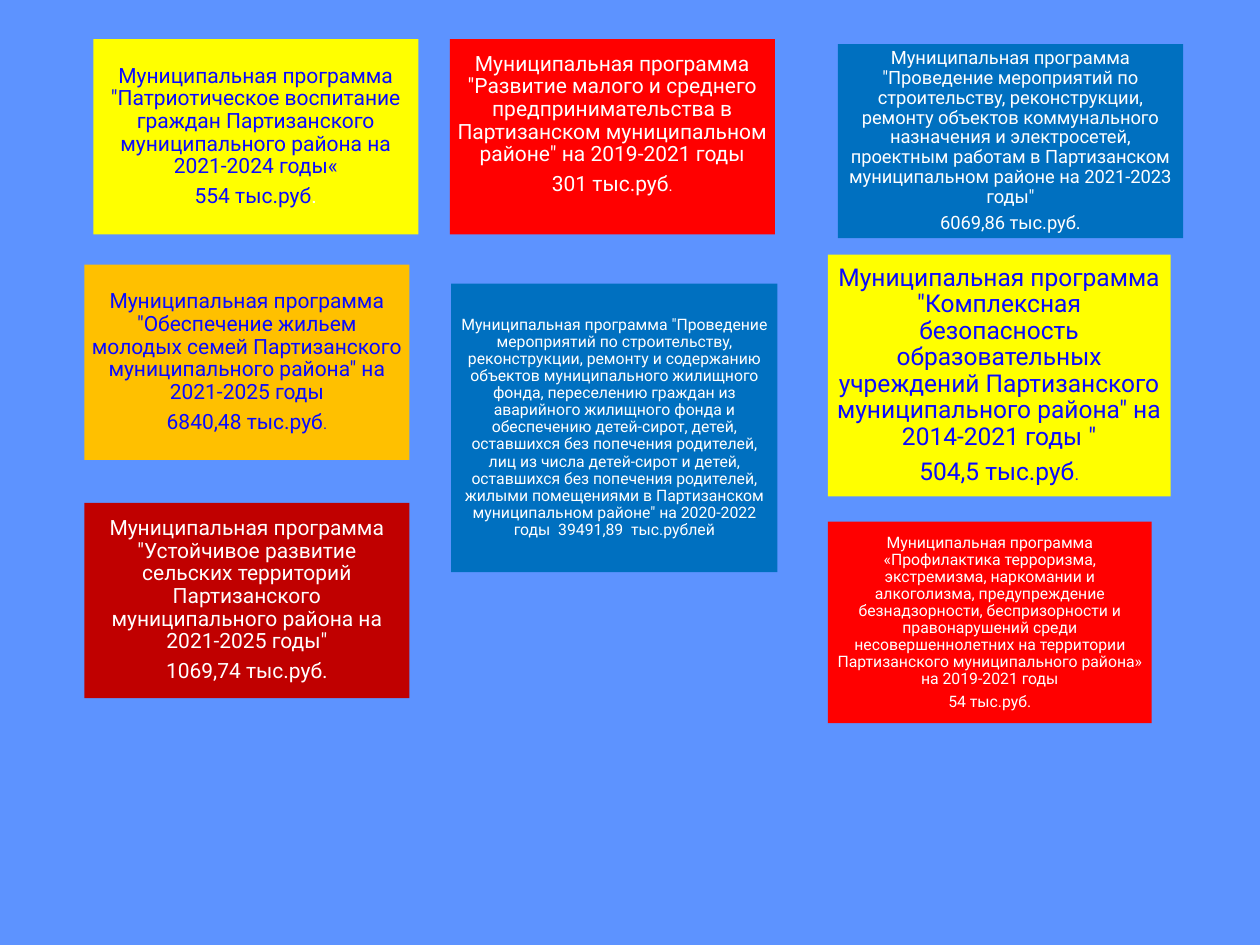
from pptx import Presentation
from pptx import util as u
from pptx.dml import color
from pptx.enum import shapes, text

INK = {
    "back": "5D93FF",
    "yellow": "FFFF00",
    "red": "FF0000",
    "blue": "0070C0",
    "amber": "FFC000",
    "wine": "C00000",
    "navy": "0A0AFF",
    "white": "FFFFFF",
}
FONT = "Roboto"
CARD = (2.58, 1.55)
LEAD = "Муниципальная программа "


def paint(fill, name):
    fill.solid()
    fill.fore_color.rgb = color.RGBColor.from_string(INK[name])


def style(run, size, ink):
    run.font.name = FONT
    run.font.size = u.Pt(size)
    run.font.color.rgb = color.RGBColor.from_string(INK[ink])


def space(para, size):
    para.alignment = text.PP_ALIGN.CENTER
    para.line_spacing = 0.9
    para.space_after = u.Pt(round(size * 0.35, 2))


def add_card(slide, spot, area, fill, ink, size, title, sum="", dot=None, pad=0.05, foot=None):
    box = slide.shapes.add_shape(
        shapes.MSO_SHAPE.RECTANGLE, *(u.Inches(v) for v in spot + area))
    box.shadow.inherit = False
    paint(box.fill, fill)
    box.line.fill.background()
    frame = box.text_frame
    frame.word_wrap = True
    frame.vertical_anchor = text.MSO_ANCHOR.MIDDLE
    frame.margin_left = frame.margin_right = frame.margin_top = u.Inches(pad)
    frame.margin_bottom = u.Inches(foot or pad)
    frame.text = "\n".join(filter(None, [LEAD + title, sum]))
    for para in frame.paragraphs:
        space(para, size)
        for run in para.runs:
            style(run, size, ink)
    if dot:
        run = frame.paragraphs[-1].add_run()
        run.text = "."
        style(run, *dot)


def main():
    deck = Presentation()
    deck.slide_width, deck.slide_height = u.Inches(10), u.Inches(7.5)
    slide = deck.slides.add_slide(deck.slide_layouts[6])
    paint(slide.background.fill, "back")

    add_card(slide, (0.74, 0.31), CARD, "yellow", "navy", 12,
             '"Патриотическое воспитание граждан Партизанского '
             'муниципального района на 2021-2024 годы«',
             "554 тыс.руб", (12, "white"))
    add_card(slide, (3.57, 0.31), CARD, "red", "white", 12,
             '"Развитие малого и среднего предпринимательства в '
             'Партизанском муниципальном районе" на 2019-2021 годы',
             "301 тыс.руб", (9, "white"), foot=0.24)
    add_card(slide, (6.65, 0.35), (2.74, 1.54), "blue", "white", 10.5,
             '"Проведение мероприятий по строительству, реконструкции, '
             'ремонту объектов коммунального назначения и электросетей, '
             'проектным работам в Партизанском муниципальном районе '
             'на 2021-2023 годы"',
             "6069,86 тыс.руб.")
    add_card(slide, (0.67, 2.1), CARD, "amber", "navy", 12,
             '"Обеспечение жильем молодых семей Партизанского '
             'муниципального района" на 2021-2025 годы',
             "6840,48 тыс.руб", (9, "navy"))
    add_card(slide, (0.67, 3.99), CARD, "wine", "white", 12,
             '"Устойчивое развитие сельских территорий Партизанского '
             'муниципального района на 2021-2025 годы"',
             "1069,74 тыс.руб.")
    add_card(slide, (6.57, 2.02), (2.72, 1.92), "yellow", "navy", 14,
             '"Комплексная безопасность образовательных учреждений '
             'Партизанского муниципального района" на 2014-2021 годы "',
             "504,5 тыс.руб", (10, "navy"), pad=0.06)
    add_card(slide, (6.57, 4.14), (2.57, 1.6), "red", "white", 9,
             '«Профилактика терроризма, экстремизма, наркомании и '
             'алкоголизма, предупреждение безнадзорности, беспризорности '
             'и правонарушений среди несовершеннолетних на территории '
             'Партизанского муниципального района» на 2019-2021 годы',
             "54 тыс.руб.", pad=0.04)
    add_card(slide, (3.58, 2.25), (2.59, 2.29), "blue", "white", 9,
             '"Проведение мероприятий по строительству, реконструкции, '
             'ремонту и содержанию объектов муниципального жилищного '
             'фонда, переселению граждан из аварийного жилищного фонда и '
             'обеспечению детей-сирот, детей, оставшихся без попечения '
             'родителей, лиц из числа детей-сирот и детей, оставшихся без '
             'попечения родителей, жилыми помещениями в Партизанском '
             'муниципальном районе" на 2020-2022 годы  39491,89  тыс.рублей',
             pad=0.04)
    deck.save("out.pptx")


if __name__ == "__main__":
    main()
